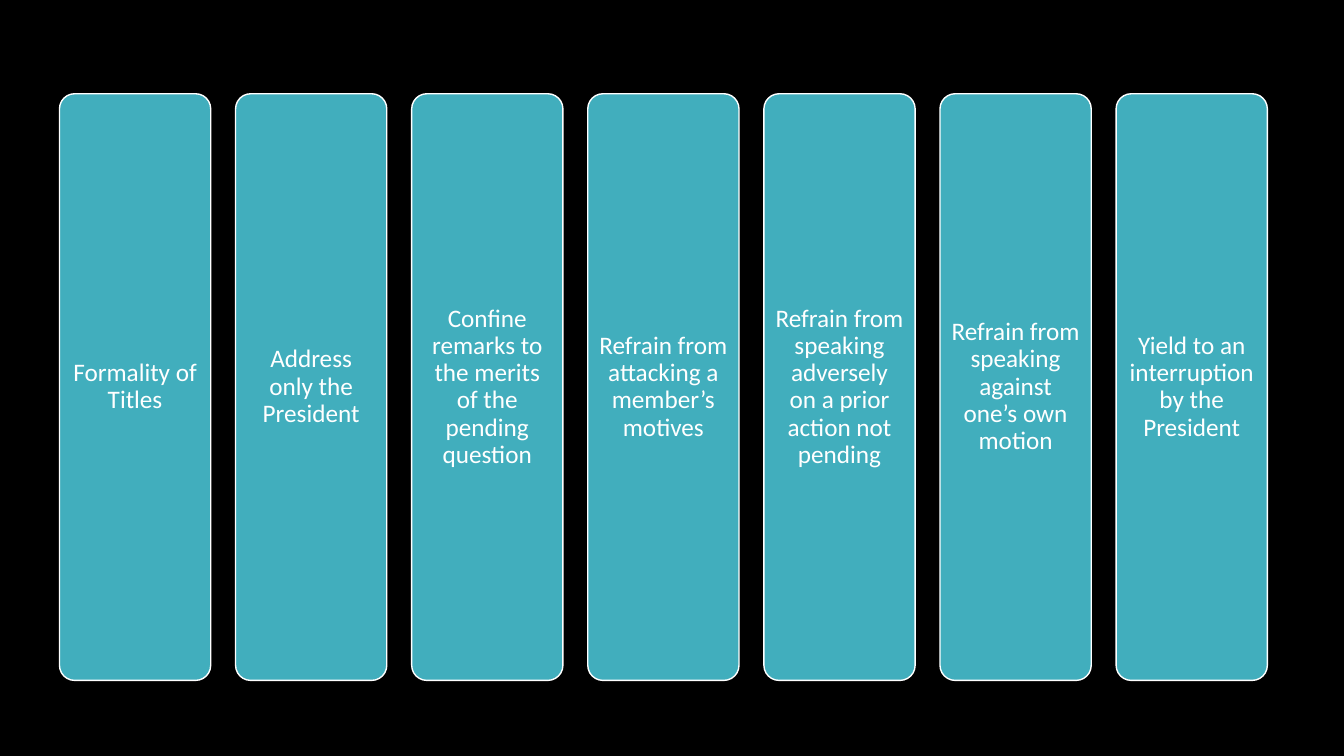
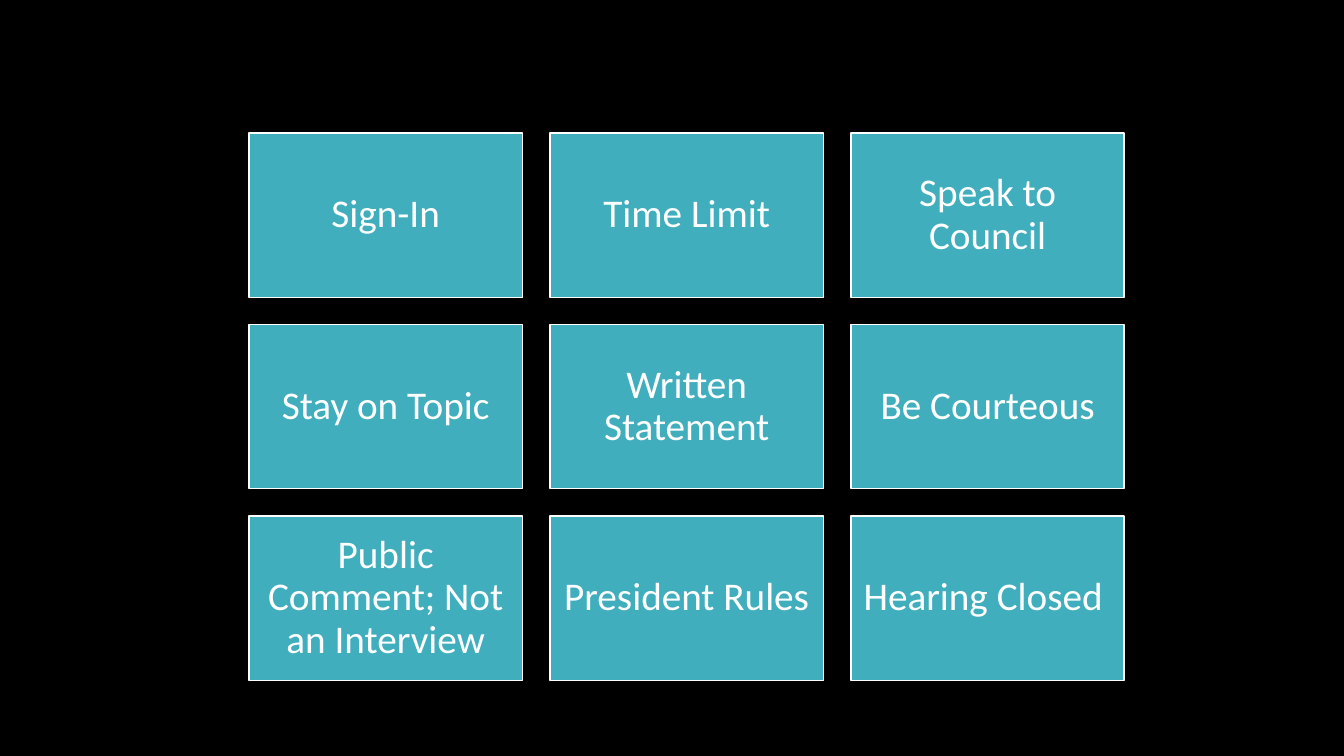
from pptx import Presentation
from pptx.dml.color import RGBColor
from pptx.enum.shapes import MSO_SHAPE as Shape
from pptx.enum.text import MSO_ANCHOR as Anchor, PP_ALIGN as Align
from pptx.util import Inches, Pt


def paint(fill, color):
    fill.solid()
    fill.fore_color.rgb = RGBColor.from_string(color)


class Deck:
    # Shared style
    BACK, TILE, INK = "000000", "41AEBD", "FFFFFF"
    FONT = "Calibri"

    def __init__(self):
        self.file = Presentation()
        self.file.slide_width = Inches(13.33)
        self.file.slide_height = Inches(7.5)
        self.slide = None

    def page(self):
        self.slide = self.file.slides.add_slide(self.file.slide_layouts[6])
        paint(self.slide.background.fill, self.BACK)

    def tile(self, text, box, size, inset, kind):
        shape = self.slide.shapes.add_shape(kind, *map(Inches, box))
        shape.shadow.inherit = False
        if kind == Shape.ROUNDED_RECTANGLE:
            shape.adjustments[0] = 0.1
        paint(shape.fill, self.TILE)
        paint(shape.line.fill, self.INK)
        shape.line.width = Pt(1)

        frame = shape.text_frame
        frame.word_wrap = True
        frame.vertical_anchor = Anchor.MIDDLE
        frame.margin_left = frame.margin_right = Inches(inset)
        frame.margin_top = frame.margin_bottom = Inches(inset)
        para = frame.paragraphs[0]
        para.text = text
        para.alignment = Align.CENTER
        para.line_spacing = 0.9
        para.font.name = self.FONT
        para.font.size = Pt(size)
        paint(para.font.fill, self.INK)

    def grid(self, texts, cols, area, cell, **style):
        """Spread equal tiles over an area, row by row."""
        left, top, width, height = area
        wide, high = cell
        rows = len(texts) // cols
        step_x = (width - wide) / max(cols - 1, 1)
        step_y = (height - high) / max(rows - 1, 1)
        for i, text in enumerate(texts):
            row, col = divmod(i, cols)
            box = (left + col * step_x, top + row * step_y, wide, high)
            self.tile(text, box, **style)


# Wording
DEBATE = [
    "Formality of Titles",
    "Address only the President",
    "Confine remarks to the merits of the pending question",
    "Refrain from attacking a member’s motives",
    "Refrain from speaking adversely on a prior action not pending",
    "Refrain from speaking against one’s own motion",
    "Yield to an interruption by the President",
]
HEARING = [
    "Sign-In", "Time Limit", "Speak to Council",
    "Stay on Topic", "Written Statement", "Be Courteous",
    "Public Comment; Not an Interview", "President Rules", "Hearing Closed ",
]


def main():
    deck = Deck()

    # Rules of debate: one row of tall panels
    deck.page()
    deck.grid(DEBATE, 7, (0.59, 0.93, 11.98, 5.82), (1.5, 5.82),
              size=18, inset=0.07, kind=Shape.ROUNDED_RECTANGLE)

    # Public hearing: three rows of three
    deck.page()
    deck.grid(HEARING, 3, (2.47, 1.32, 8.68, 5.43), (2.71, 1.63),
              size=28, inset=0.12, kind=Shape.RECTANGLE)

    deck.file.save("out.pptx")


if __name__ == "__main__":
    main()
